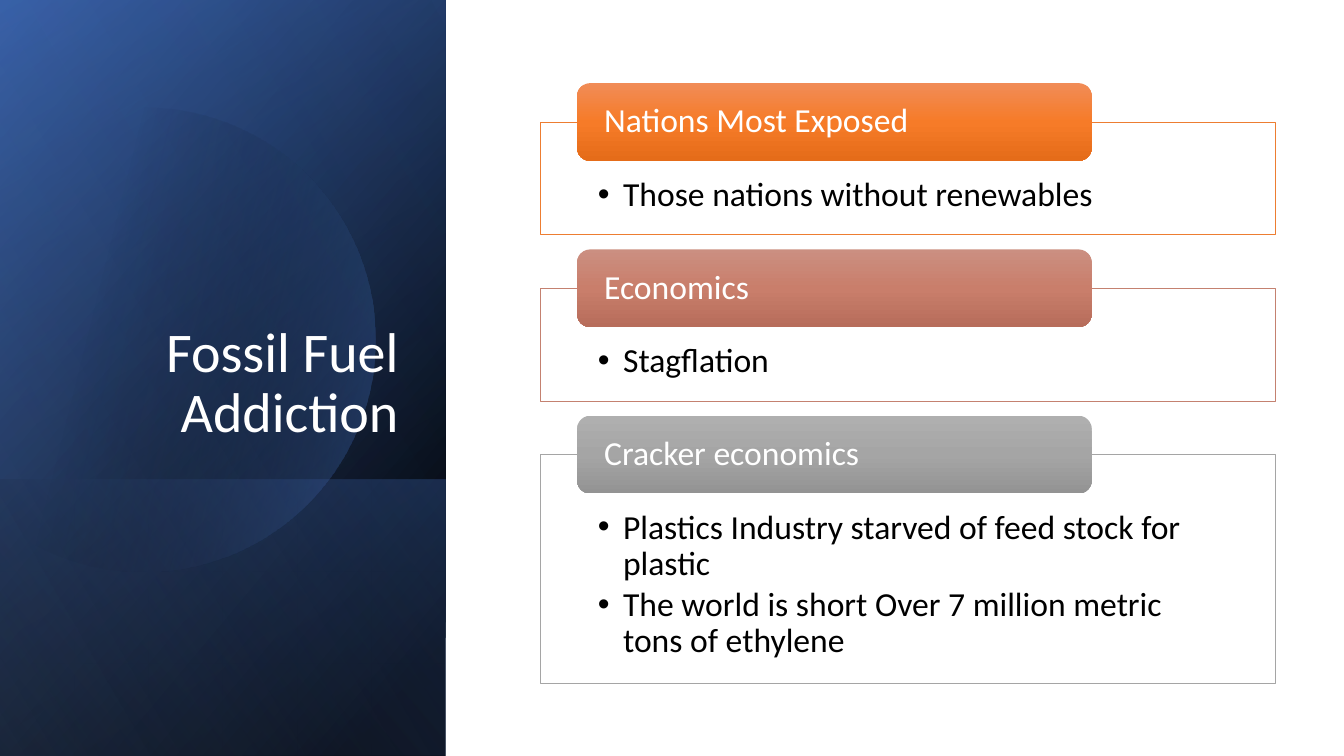
"""Build the Fossil Fuel Addiction slide: a shaded title panel and three cards."""
from math import acos, cos, sin
from lxml.etree import SubElement as Sub
from pptx import Presentation
from pptx.dml.color import RGBColor
from pptx.enum.shapes import MSO_SHAPE as Kind
from pptx.enum.text import MSO_ANCHOR as Anchor, PP_ALIGN as Align
from pptx.oxml.ns import qn
from pptx.util import Inches as Inch, Pt

rgb = RGBColor.from_string


def shade(shape, stops, turn):
    """Fill a shape with a gradient of (place, colour, opacity) stops."""
    shape.shadow.inherit = False
    shape.line.fill.background()
    shape.fill.gradient()
    grad = shape.fill._xPr.find(qn("a:gradFill"))
    for part in list(grad):
        grad.remove(part)
    grad.set("rotWithShape", "1")
    group = Sub(grad, qn("a:gsLst"))
    for place, hue, alpha in stops:
        stop = Sub(group, qn("a:gs"), pos=str(place * 1000))
        tone = Sub(stop, qn("a:srgbClr"), val=hue)
        Sub(tone, qn("a:alpha"), val=str(alpha * 1000))
    Sub(grad, qn("a:lin"), ang=str(turn * 60000), scaled="0")


def write(shape, *texts, size=24, hue="FFFFFF", align=Align.LEFT,
          anchor=Anchor.MIDDLE, pad=(0.1, 0.05, 0.1, 0.05), dot=False):
    """Set paragraphs of text in a shape."""
    frame = shape.text_frame
    frame.word_wrap = True
    frame.vertical_anchor = anchor
    (frame.margin_left, frame.margin_top,
     frame.margin_right, frame.margin_bottom) = map(Inch, pad)
    for i, text in enumerate(texts):
        para = frame.add_paragraph() if i else frame.paragraphs[0]
        para.alignment = align
        para.line_spacing = 0.9
        if dot:
            para.space_after = Pt(size * 0.15)
            props = para._p.get_or_add_pPr()
            props.set("marL", str(Inch(0.25)))
            props.set("indent", str(-Inch(0.25)))
            Sub(props, qn("a:buFont"), typeface="Arial")
            Sub(props, qn("a:buChar"), char="•")
        run = para.add_run()
        run.text = text
        run.font.name, run.font.size = "Calibri", Pt(size)
        run.font.color.rgb = rgb(hue)


W, H = 13.33, 7.5
deck = Presentation()
deck.slide_width, deck.slide_height = Inch(W), Inch(H)
shapes = deck.slides.add_slide(deck.slide_layouts[6]).shapes

side = 4.42
foot = 2.74
bands = [
    (H, [(8, "000000", 100), (100, "2F5597", 100)], 50),
    (H, [(0, "000000", 0), (99, "4472C4", 46)], 30),
    (foot, [(2, "4472C4", 29), (100, "000000", 30)], 130),
    (None, [(29, "000000", 0), (100, "4472C4", 43)], 14),
    (H, [(0, "000000", 0), (99, "8FAADC", 11)], 120),
]
mid_x, mid_y, ray = 1.42, 3.37, 2.3
for tall, stops, turn in bands:
    if tall:
        band = shapes.add_shape(Kind.RECTANGLE, Inch((side - tall) / 2),
                                Inch(H - (tall + side) / 2), Inch(tall), Inch(side))
        band.rotation = 90
        band._element.spPr.find(qn("a:xfrm")).set("flipH", "1")
    else:
        end = acos(-mid_x / ray)
        arc = [end * (i / 60 - 1) for i in range(121)]
        dots = [(Inch(mid_x + ray * cos(a)), Inch(mid_y + ray * sin(a))) for a in arc]
        path = shapes.build_freeform(*dots[0])
        path.add_line_segments(dots[1:], close=True)
        band = path.convert_to_shape()
    shade(band, stops, turn)

title = shapes.add_textbox(Inch(0.64), Inch(1.84), Inch(3.41), Inch(2.62))
write(title, "Fossil Fuel Addiction", size=40, align=Align.RIGHT, anchor=Anchor.BOTTOM)

left, wide = 5.36, 7.29
top, step = 0.11 * H, 0.22 * H
tab = 0.77
cards = [
    ("Nations Most Exposed", ["Those nations without renewables"],
     1.12, "ED7D31", ["F18C57", "F67B28", "E56C19"]),
    ("Economics", ["Stagflation"],
     1.12, "C48170", ["CB8F81", "C97E6B", "B76D5B"]),
    ("Cracker economics", ["Plastics Industry starved of feed stock for plastic",
                           "The world is short Over 7 million metric tons of ethylene"],
     2.27, "A5A5A5", ["AFAFAF", "A5A5A5", "939393"]),
]
for i, (head, notes, tall, edge, hues) in enumerate(cards):
    y = top + i * step
    card = shapes.add_shape(Kind.RECTANGLE, Inch(left), Inch(y + tab / 2),
                            Inch(wide), Inch(tall))
    card.shadow.inherit = False
    card.fill.solid()
    card.fill.fore_color.rgb = rgb("FFFFFF")
    card.line.color.rgb, card.line.width = rgb(edge), Pt(0.5)
    write(card, *notes, hue="000000", anchor=Anchor.TOP,
          pad=(0.57, 0.55, 0.57, 0.19), dot=True)
    label = shapes.add_shape(Kind.ROUNDED_RECTANGLE, Inch(left + 0.05 * wide), Inch(y),
                             Inch(0.7 * wide), Inch(tab))
    shade(label, [(50 * j, hue, 100) for j, hue in enumerate(hues)], 90)
    write(label, head, pad=(0.23, 0, 0.23, 0))

deck.save("out.pptx")
